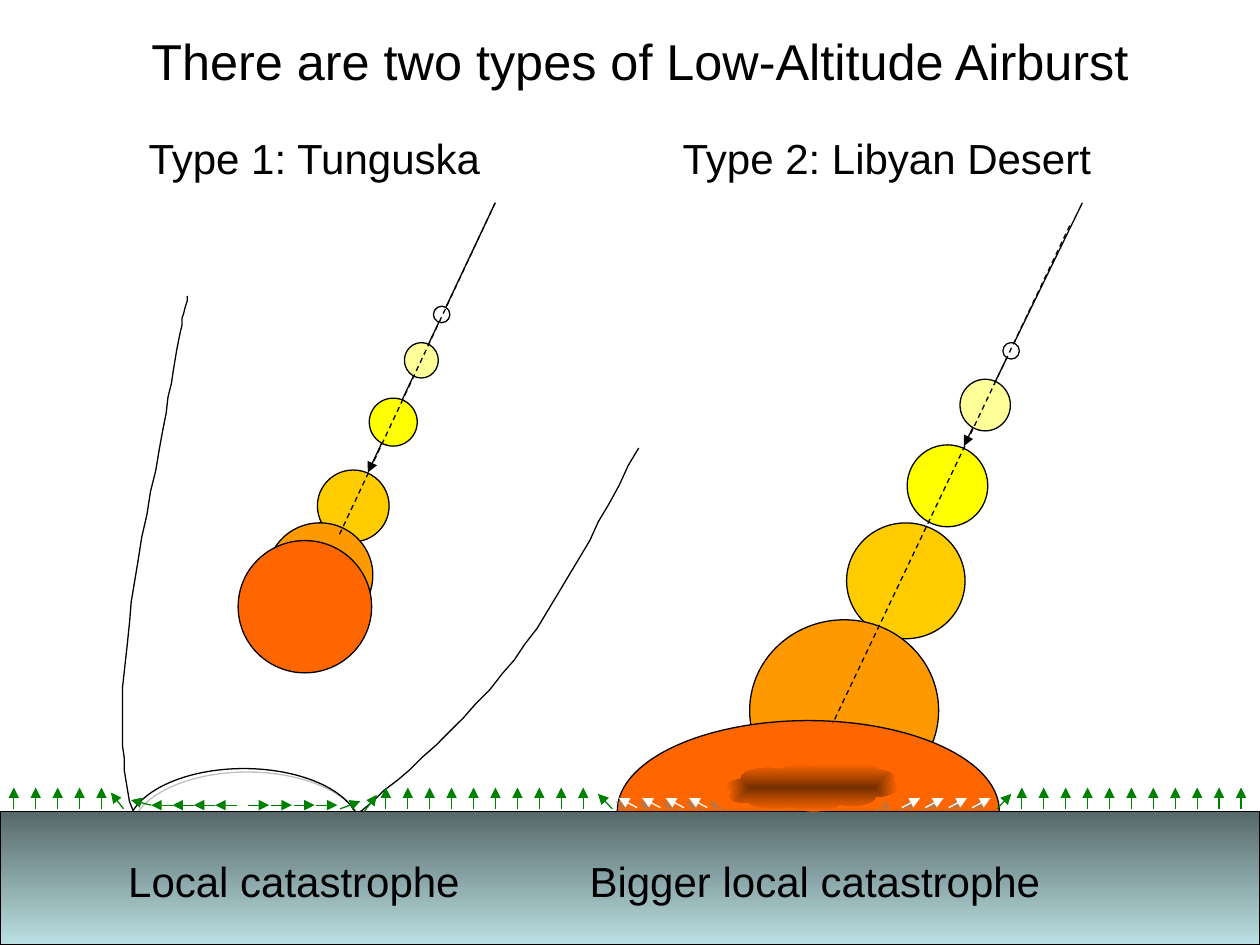
from lxml.etree import SubElement
from pptx import Presentation
from pptx.dml.color import RGBColor
from pptx.enum.dml import MSO_LINE
from pptx.enum.shapes import MSO_CONNECTOR, MSO_SHAPE
from pptx.enum.text import MSO_ANCHOR, MSO_AUTO_SIZE, PP_ALIGN
from pptx.oxml.ns import qn
from pptx.util import Pt

COLORS = {
    "black": "000000", "white": "FFFFFF", "shadow": "808080", "tree": "008000",
    "pale": "FFFF99", "yellow": "FFFF00", "gold": "FFCC00", "amber": "FF9900",
    "orange": "FF6600", "scorch": "762F00", "rock": "566869", "soil": "BBE0E3",
}


class AirburstSlide:
    """Draws styled elements, measured in points, on one slide."""

    font = "Arial"
    line_width = 0.75

    def __init__(self, slide):
        self.slide = slide
        self.shapes = slide.shapes

    def color(self, name):
        return RGBColor.from_string(COLORS[name])

    def style_text(self, frame, text, size, align):
        frame.text = text
        paragraph = frame.paragraphs[0]
        paragraph.alignment = align
        font = paragraph.runs[0].font
        font.name, font.size = self.font, Pt(size)
        font.color.rgb = self.color("black")

    def title(self, text, left, top, width, height):
        holder = self.shapes.title
        holder.left, holder.top = Pt(left), Pt(top)
        holder.width, holder.height = Pt(width), Pt(height)
        frame = holder.text_frame
        frame.auto_size = MSO_AUTO_SIZE.NONE
        frame.vertical_anchor = MSO_ANCHOR.MIDDLE
        self.style_text(frame, text, 28.8, PP_ALIGN.CENTER)

    def label(self, text, left, top, width):
        box = self.shapes.add_textbox(Pt(left), Pt(top), Pt(width), Pt(36))
        box.text_frame.word_wrap = False
        self.style_text(box.text_frame, text, 24, PP_ALIGN.LEFT)

    def outline(self, shape, color="black"):
        shape.line.color.rgb = self.color(color)
        shape.line.width = Pt(self.line_width)

    def cast_shadow(self, effects, angle):
        shadow = SubElement(effects, qn("a:outerShdw"), dist=str(Pt(2.8)),
                            dir=str(angle * 60000), algn="ctr", rotWithShape="0")
        tint = SubElement(shadow, qn("a:srgbClr"), val=COLORS["shadow"])
        SubElement(tint, qn("a:alpha"), val="50000")

    def solid(self, kind, left, top, width, height, fill=None):
        shape = self.shapes.add_shape(kind, Pt(left), Pt(top), Pt(width), Pt(height))
        shape.shadow.inherit = False
        self.outline(shape)
        if fill:
            shape.fill.solid()
            shape.fill.fore_color.rgb = self.color(fill)
        else:
            shape.fill.background()
        return shape

    def ball(self, fill, *place):
        return self.solid(MSO_SHAPE.OVAL, *place, fill)

    def crater(self, *place):
        rim = self.ball(None, *place)
        self.cast_shadow(rim._element.spPr.find(qn("a:effectLst")), 45)

    def gradient(self, kind, place, start, end):
        shape = self.solid(kind, *place)
        shape.fill.gradient()
        shape.fill.gradient_angle = 270
        for stop, name, position in zip(shape.fill.gradient_stops, (start, end), (0, 1)):
            stop.color.rgb = self.color(name)
            stop.position = position
        return shape

    def scorch_cloud(self, *place):
        cloud = self.gradient(MSO_SHAPE.CLOUD, place, "scorch", "orange")
        cloud.line.fill.background()
        blend = cloud._element.spPr.find(qn("a:gradFill"))
        blend.remove(blend.find(qn("a:lin")))
        focus = SubElement(blend, qn("a:path"))
        focus.set("path", "rect")
        SubElement(focus, qn("a:fillToRect"), l="50000", t="50000", r="50000", b="50000")

    def line(self, start, end, color="black", arrow=True, dashed=False, shadow=False):
        link = self.shapes.add_connector(MSO_CONNECTOR.STRAIGHT, *map(Pt, start + end))
        self.outline(link, color)
        if dashed:
            link.line.dash_style = MSO_LINE.DASH
        properties = link._element.spPr
        if arrow:
            SubElement(properties.find(qn("a:ln")), qn("a:tailEnd"), type="triangle")
        effects = SubElement(properties, qn("a:effectLst"))
        if shadow:
            self.cast_shadow(effects, 135)

    def curve(self, start, segments, steps=12):
        points, here = [], start
        for first, second, end in segments:
            for step in range(1, steps + 1):
                t = step / steps
                u = 1 - t
                weights = (u ** 3, 3 * u * u * t, 3 * u * t * t, t ** 3)
                corners = (here, first, second, end)
                points.append(tuple(sum(w * c[axis] for w, c in zip(weights, corners))
                                    for axis in (0, 1)))
            here = end
        builder = self.shapes.build_freeform(*start, scale=Pt(1))
        builder.add_line_segments(points, close=False)
        wave = builder.convert_to_shape()
        wave.shadow.inherit = False
        wave.fill.background()
        self.outline(wave)


def main():
    deck = Presentation()
    deck.slide_width, deck.slide_height = Pt(720), Pt(540)
    art = AirburstSlide(deck.slides.add_slide(deck.slide_layouts[5]))
    art.title("There are two types of Low-Altitude Airburst", 41.8, 15.1, 648, 38.9)

    art.curve((107.3, 169.2), [
        ((104.4, 181.4), (102.2, 194.4), (96.5, 226.8)),
        ((90.7, 259.9), (76.3, 326.9), (72.7, 365.8)),
        ((68.4, 403.9), (69.1, 437), (74.2, 457.9)),
        ((79.2, 478.8), (88.6, 485.3), (100.8, 490.3)),
        ((113, 495.4), (130.3, 493.9), (147.6, 489.6)),
        ((165.6, 484.6), (182.2, 481.7), (206.6, 463)),
        ((230.4, 444.2), (267.1, 411.1), (293.8, 376.6)),
        ((319.7, 342), (342.7, 298.8), (365, 255.6)),
    ])
    art.crater(72.7, 439.2, 133.2, 69.8)
    for fireball in [
        ("gold", 181.4, 268.6, 41, 41),
        ("amber", 152.6, 298.8, 60.5, 59.8),
        ("orange", 136.1, 308.9, 76.3, 75.6),
        ("yellow", 518.4, 254.2, 46.1, 46.8),
        ("gold", 483.8, 298.8, 67.7, 66.2),
        ("amber", 428.4, 354.2, 108, 103.7),
        ("orange", 352.8, 411.8, 218.2, 103),
    ]:
        art.ball(*fireball)
    art.gradient(MSO_SHAPE.RECTANGLE, (0, 463.7, 720, 76.3), "rock", "soil")

    art.line((618.5, 115.9), (550.8, 254.9))
    art.line((283, 115.9), (210.2, 270))
    for meteor in [
        ("yellow", 211, 227.5, 27.4, 27.4),
        ("pale", 231.1, 195.8, 19.4, 20.2),
        ("white", 247.7, 175, 9.4, 9.4),
        ("pale", 548.6, 216.7, 28.8, 29.5),
        ("white", 573.1, 195.8, 9.4, 9.4),
    ]:
        art.ball(*meteor)
    art.line((283, 115.9), (193.7, 306), arrow=False, dashed=True)
    art.line((611.3, 128.9), (475.9, 413.3), arrow=False, dashed=True)

    for first, count in ((7.9, 5), (220.5, 10), (583.9, 11)):
        for index in range(count):
            x = first + 12.53 * index
            art.line((x, 462.2), (x, 450), "tree")
    for index in range(4):
        outward_left, outward_right = 98.6 + 12.2 * index, 141.8 + 13 * index
        art.line((outward_left, 460.1), (outward_left - 12.2, 460.1), "tree")
        art.line((outward_right, 460.1), (outward_right + 12, 460.1), "tree")
    for start, end in [
        ((86.4, 460.1), (74.9, 457.2)),
        ((70.6, 462.2), (63.4, 452.9)),
        ((208.1, 463.7), (215.3, 454.3)),
        ((194.4, 462.2), (205.9, 457.9)),
    ]:
        art.line(start, end, "tree")

    blast_center = 459.8
    for side in (-1, 1):
        art.line((blast_center + side * 109.9, 462.2),
                 (blast_center + side * 118.1, 453.6), "tree")
        for index in range(5):
            tip = 106.2 - 13.4 * index
            art.line((blast_center + side * (tip - 10.4), 461.5),
                     (blast_center + side * tip, 456),
                     "white" if index < 4 else "orange", shadow=True)
    art.scorch_cloud(414.7, 436.3, 98.6, 27.4)

    art.label("Type 1: Tunguska", 77.8, 72, 206.6)
    art.label("Type 2: Libyan Desert", 383, 72, 249.1)
    art.label("Local catastrophe", 66.2, 485.3, 204.5)
    art.label("Bigger local catastrophe", 329.8, 485.3, 272.2)
    deck.save("out.pptx")


if __name__ == "__main__":
    main()
